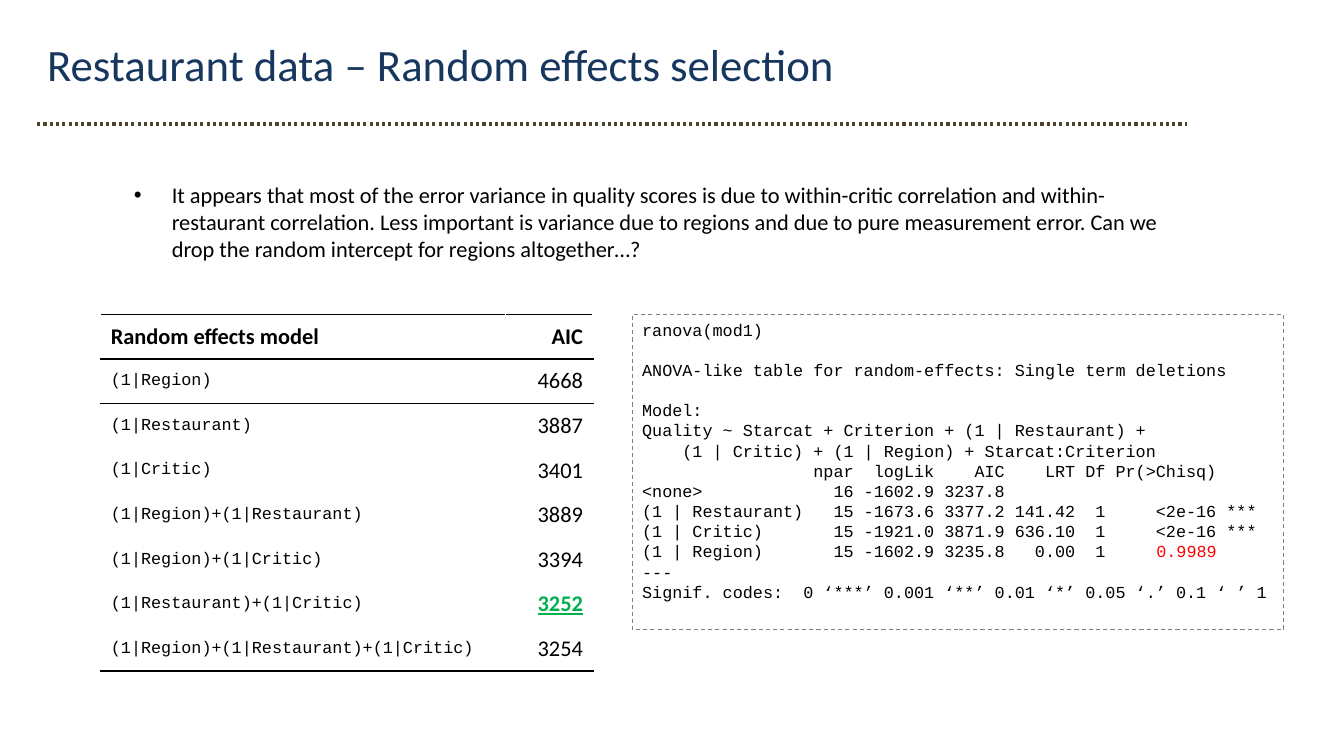
from lxml.etree import SubElement
from pptx import Presentation
from pptx.dml.color import RGBColor
from pptx.enum.dml import MSO_LINE_DASH_STYLE as Dash
from pptx.enum.shapes import MSO_CONNECTOR, MSO_SHAPE
from pptx.enum.text import MSO_ANCHOR, PP_ALIGN
from pptx.oxml.ns import qn
from pptx.util import Pt

COLORS = {
    "title": "17375E",
    "rule": "4A452A",
    "text": "000000",
    "frame": "808080",
    "best": "00B050",
    "alert": "FF0000",
}
SANS, MONO = "Calibri", "Courier New"

TITLE = "Restaurant data – Random effects selection"
FINDING = (
    "It appears that most of the error variance in quality scores is due to "
    "within-critic correlation and within-restaurant correlation. Less important "
    "is variance due to regions and due to pure measurement error. Can we drop "
    "the random intercept for regions altogether…?"
)
MODELS = [
    ("Random effects model", "AIC"),
    ("(1|Region)", "4668"),
    ("(1|Restaurant)", "3887"),
    ("(1|Critic)", "3401"),
    ("(1|Region)+(1|Restaurant)", "3889"),
    ("(1|Region)+(1|Critic)", "3394"),
    ("(1|Restaurant)+(1|Critic)", "3252"),
    ("(1|Region)+(1|Restaurant)+(1|Critic)", "3254"),
]
BEST_AIC = "3252"
RULED_EDGES = {0, 1, 2, len(MODELS)}
# Each block of output is set off from the one before by a line's height.
RANOVA_BLOCKS = [
    "ranova(mod1)",
    "ANOVA-like table for random-effects: Single term deletions",
    """Model:
Quality ~ Starcat + Criterion + (1 | Restaurant) +
    (1 | Critic) + (1 | Region) + Starcat:Criterion
                 npar  logLik    AIC    LRT Df Pr(>Chisq)
<none>             16 -1602.9 3237.8
(1 | Restaurant)   15 -1673.6 3377.2 141.42  1     <2e-16 ***
(1 | Critic)       15 -1921.0 3871.9 636.10  1     <2e-16 ***
(1 | Region)       15 -1602.9 3235.8   0.00  1     0.9989
---
Signif. codes:  0 ‘***’ 0.001 ‘**’ 0.01 ‘*’ 0.05 ‘.’ 0.1 ‘ ’ 1""",
]
REGION_P = "0.9989"
LINE_HEIGHT = Pt(14.4)


def rgb(name):
    return RGBColor.from_string(COLORS[name])


def set_font(font, size, face=SANS, color="text", bold=False):
    font.size, font.name, font.bold = Pt(size), face, bold
    font.color.rgb = rgb(color)


def add_text(slide, text, left, top, width, height, size, color="text"):
    frame = slide.shapes.add_textbox(Pt(left), Pt(top), Pt(width), Pt(height)).text_frame
    frame.word_wrap = True
    paragraph = frame.paragraphs[0]
    paragraph.text = text
    set_font(paragraph.font, size, color=color)
    return paragraph


def add_bullet(paragraph, indent):
    props = paragraph._p.get_or_add_pPr()
    props.set("marL", str(Pt(indent)))
    props.set("indent", str(-Pt(indent)))
    bullet_font = SubElement(props, qn("a:buFont"))
    bullet_font.set("typeface", "Arial")
    SubElement(props, qn("a:buChar")).set("char", "•")
    # Schema order puts the default run properties after the bullet.
    props.append(props.find(qn("a:defRPr")))


def add_dotted_rule(slide, left, right, y):
    rule = slide.shapes.add_connector(MSO_CONNECTOR.STRAIGHT, Pt(left), Pt(y), Pt(right), Pt(y))
    rule.line.color.rgb = rgb("rule")
    rule.line.width = Pt(2.25)
    rule.line.dash_style = Dash.ROUND_DOT
    SubElement(rule._element.spPr, qn("a:effectLst"))


def set_border(cell, side):
    """Draw a thin line on the 'T' or 'B' side; call before the fill, T before B."""
    line = SubElement(cell._tc.get_or_add_tcPr(), qn("a:ln" + side))
    line.set("w", str(Pt(1)))
    fill = SubElement(line, qn("a:solidFill"))
    SubElement(fill, qn("a:srgbClr")).set("val", COLORS["text"])


def add_model_table(slide, left, top, widths, row_height):
    table = slide.shapes.add_table(
        len(MODELS), len(widths), Pt(left), Pt(top),
        Pt(sum(widths)), Pt(row_height * len(MODELS)),
    ).table
    table.first_row = table.horz_banding = False
    for column, width in zip(table.columns, widths):
        column.width = Pt(width)
    for r, entries in enumerate(MODELS):
        table.rows[r].height = Pt(row_height)
        for c, entry in enumerate(entries):
            cell = table.cell(r, c)
            for side, edge in (("T", r), ("B", r + 1)):
                if edge in RULED_EDGES:
                    set_border(cell, side)
            cell.fill.background()
            cell.vertical_anchor = MSO_ANCHOR.MIDDLE
            paragraph = cell.text_frame.paragraphs[0]
            paragraph.text = entry
            font = paragraph.runs[0].font
            if r and c == 0:
                set_font(font, 12, MONO)
            else:
                best = entry == BEST_AIC
                set_font(font, 16, SANS, "best" if best else "text", best or r == 0)
                font.underline = best
            if c == 1:
                paragraph.alignment = PP_ALIGN.RIGHT


def add_output_box(slide, left, top, width, height):
    box = slide.shapes.add_shape(MSO_SHAPE.RECTANGLE, Pt(left), Pt(top), Pt(width), Pt(height))
    box.shadow.inherit = False
    box.fill.background()
    box.line.color.rgb = rgb("frame")
    box.line.width = Pt(0.75)
    box.line.dash_style = Dash.DASH
    frame = box.text_frame
    frame.word_wrap = True
    frame.vertical_anchor = MSO_ANCHOR.TOP
    paragraph = None
    for block in RANOVA_BLOCKS:
        for number, line in enumerate(block.split("\n")):
            starts_block = paragraph is not None and number == 0
            paragraph = frame.add_paragraph() if paragraph is not None else frame.paragraphs[0]
            paragraph.alignment = PP_ALIGN.LEFT
            paragraph.line_spacing = LINE_HEIGHT
            paragraph.space_before = LINE_HEIGHT if starts_block else Pt(0)
            before, p_value, _ = line.partition(REGION_P)
            for text, color in ((before, "text"), (p_value, "alert")):
                if text:
                    run = paragraph.add_run()
                    run.text = text
                    set_font(run.font, 12, MONO, color)


def main():
    deck = Presentation()
    deck.slide_width, deck.slide_height = Pt(960), Pt(540)
    slide = deck.slides.add_slide(deck.slide_layouts[6])
    add_text(slide, TITLE, 26.6, 23, 839, 46, 32, "title")
    add_dotted_rule(slide, 26.6, 848.2, 88.6)
    finding = add_text(slide, FINDING, 88.6, 126, 771, 388, 16)
    add_bullet(finding, 27)
    add_model_table(slide, 72, 224.6, (289.2, 62.4), 31.86)
    add_output_box(slide, 451.6, 224.6, 465.2, 225.4)
    deck.save("out.pptx")


if __name__ == "__main__":
    main()
